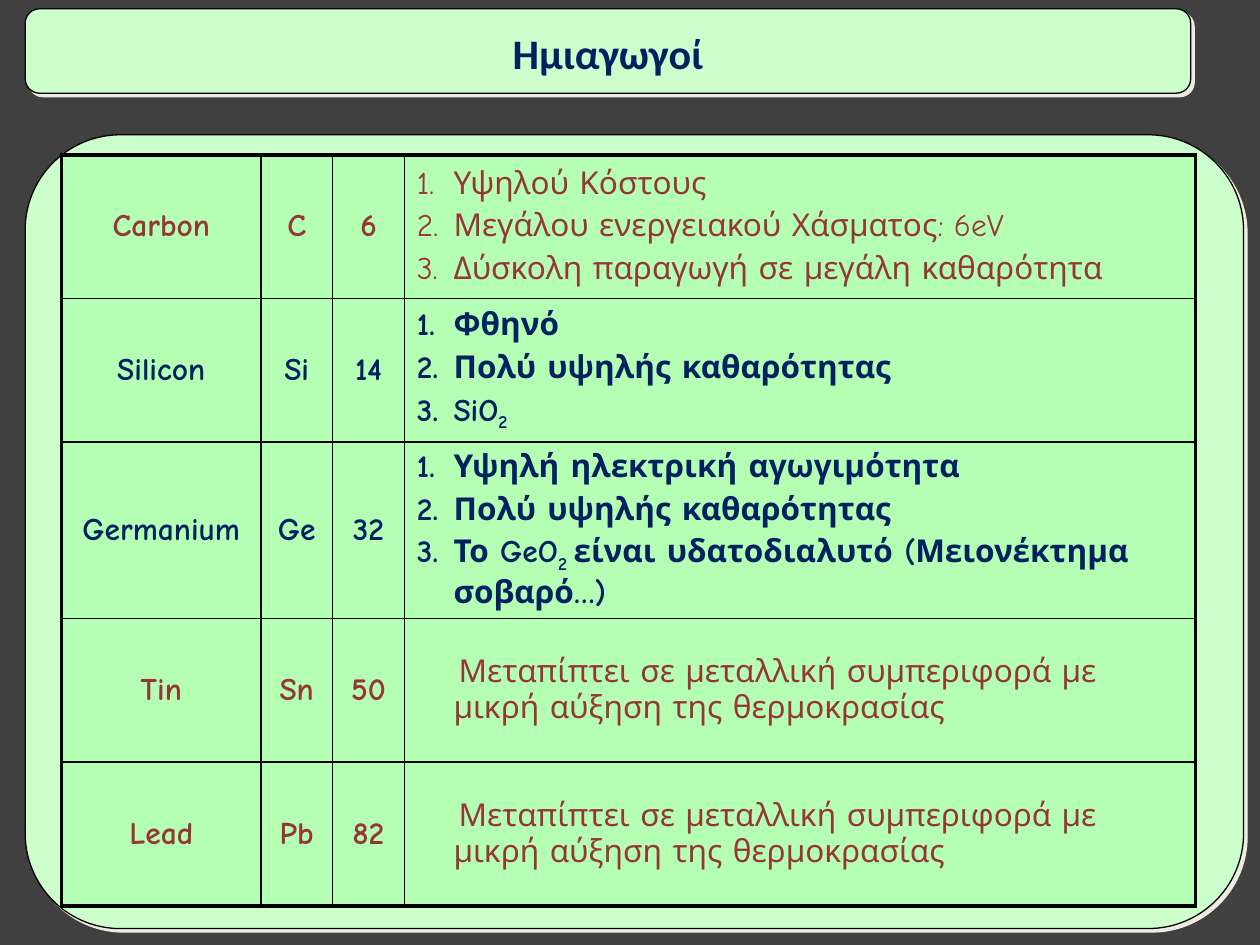
from dataclasses import dataclass

from lxml.etree import SubElement
from pptx import Presentation
from pptx.dml.color import RGBColor as RGB
from pptx.enum.shapes import MSO_SHAPE as Shape
from pptx.enum.text import MSO_ANCHOR as Anchor, MSO_AUTO_SIZE as AutoSize, PP_ALIGN as Align
from pptx.oxml import parse_xml
from pptx.oxml.ns import nsdecls, qn
from pptx.util import Inches, Pt


@dataclass(frozen=True)
class Theme:
    backdrop: str = "404040"
    panel: str = "CCFFCC"
    cell: str = "99FF99"
    cell_opacity: int = 44
    line: str = "000000"
    shadow: str = "EEECE1"
    suitable: str = "002060"
    unsuitable: str = "953735"
    title_font: str = "Calibri"
    table_font: str = "Comic Neue"
    title_size: int = 24
    table_size: int = 18
    outer_border: float = 2.25
    inner_border: float = 1


class SlideBuilder:
    def __init__(self, slide, theme):
        self.slide = slide
        self.theme = theme
        background = slide.background.fill
        background.solid()
        background.fore_color.rgb = RGB.from_string(theme.backdrop)

    def panel(self, left, top, width, height, corner):
        panel = self.slide.shapes.add_shape(
            Shape.ROUNDED_RECTANGLE, Inches(left), Inches(top), Inches(width), Inches(height))
        panel.adjustments[0] = corner
        panel.fill.solid()
        panel.fill.fore_color.rgb = RGB.from_string(self.theme.panel)
        panel.line.color.rgb = RGB.from_string(self.theme.line)
        panel.line.width = Pt(0.75)
        panel.shadow.inherit = False
        effects = panel._element.spPr.find(qn("a:effectLst"))
        effects.append(parse_xml(
            f'<a:outerShdw {nsdecls("a")} dist="{Pt(2.8)}" dir="2700000" algn="ctr" '
            f'rotWithShape="0"><a:srgbClr val="{self.theme.shadow}"/></a:outerShdw>'))

    def title(self, text, left, top, width, height):
        """Fill the title placeholder and bring it in front of its banner."""
        title = self.slide.shapes.title
        title.left, title.top = Inches(left), Inches(top)
        title.width, title.height = Inches(width), Inches(height)
        frame = title.text_frame
        frame.text = text
        frame.word_wrap = True
        frame.vertical_anchor = Anchor.TOP
        frame.auto_size = AutoSize.SHAPE_TO_FIT_TEXT
        heading = frame.paragraphs[0]
        heading.alignment = Align.CENTER
        self.style(heading, self.theme.title_font, self.theme.title_size,
                   self.theme.suitable, True)
        self.slide.shapes._spTree.append(title._element)

    def style(self, paragraph, typeface, size, color, bold):
        font = paragraph.font
        font.name, font.size, font.bold = typeface, Pt(size), bold
        font.color.rgb = RGB.from_string(color)

    def table(self, elements, left, top, widths, heights):
        table = self.slide.shapes.add_table(
            len(elements), len(widths), Inches(left), Inches(top),
            Inches(sum(widths)), Inches(sum(heights))).table
        table.first_row = table.horz_banding = False
        for column, width in zip(table.columns, widths):
            column.width = Inches(width)
        for row, height in zip(table.rows, heights):
            row.height = Inches(height)
        last_row, last_column = len(heights) - 1, len(widths) - 1
        for r, (name, symbol, number, remarks, suitable) in enumerate(elements):
            color = self.theme.suitable if suitable else self.theme.unsuitable
            for c, label in enumerate((name, symbol, number)):
                self.label(table.cell(r, c), label, color)
            self.remarks(table.cell(r, last_column), remarks, color, suitable)
            for c in range(len(widths)):
                self.frame_cell(table.cell(r, c), {
                    "L": c == 0, "R": c == last_column, "T": r == 0, "B": r == last_row})

    def label(self, cell, text, color):
        cell.text = text
        paragraph = cell.text_frame.paragraphs[0]
        paragraph.alignment = Align.CENTER
        self.style(paragraph, self.theme.table_font, self.theme.table_size, color, True)

    def remarks(self, cell, remarks, color, bold):
        """Write a numbered list, or a plain note when there is one remark.

        Text between underscores is set as subscript.
        """
        numbered = len(remarks) > 1
        frame = cell.text_frame
        for i, remark in enumerate(remarks):
            paragraph = frame.add_paragraph() if i else frame.paragraphs[0]
            props = paragraph._p.get_or_add_pPr()
            props.set("marL", str(Inches(0.29)))
            props.set("indent", str(Inches(-0.29 if numbered else 0.04)))
            if i:
                paragraph.space_before = Pt(0.2 * self.theme.table_size)
            if numbered:
                SubElement(props, qn("a:buFont"), typeface=self.theme.table_font)
                SubElement(props, qn("a:buAutoNum"), type="arabicPeriod")
            self.style(paragraph, self.theme.table_font, self.theme.table_size, color, bold)
            for part, text in enumerate(remark.split("_")):
                if text:
                    run = paragraph.add_run()
                    run.text = text
                    if part % 2:
                        run._r.get_or_add_rPr().set("baseline", "-25000")

    def frame_cell(self, cell, outer_sides):
        theme = self.theme
        cell.vertical_anchor = Anchor.MIDDLE
        cell.fill.solid()
        cell.fill.fore_color.rgb = RGB.from_string(theme.cell)
        props = cell._tc.get_or_add_tcPr()
        tint = props.find(qn("a:solidFill")).find(qn("a:srgbClr"))
        SubElement(tint, qn("a:alpha"), val=str(theme.cell_opacity * 1000))
        for position, (side, outer) in enumerate(outer_sides.items()):
            width = Pt(theme.outer_border if outer else theme.inner_border)
            props.insert(position, parse_xml(
                f'<a:ln{side} {nsdecls("a")} w="{width}"><a:solidFill>'
                f'<a:srgbClr val="{theme.line}"/></a:solidFill></a:ln{side}>'))


METALLIC = ["Μεταπίπτει σε μεταλλική συμπεριφορά με μικρή αύξηση της θερμοκρασίας"]
PURE = "Πολύ υψηλής καθαρότητας"
# name, symbol, atomic number, remarks, suitable as a semiconductor
ELEMENTS = [
    ("Carbon", "C", "6", ["Υψηλού Κόστους", "Μεγάλου ενεργειακού Χάσματος: 6eV",
                          "Δύσκολη παραγωγή σε μεγάλη καθαρότητα"], False),
    ("Silicon", "Si", "14", ["Φθηνό", PURE, "SiO_2_"], True),
    ("Germanium", "Ge", "32", ["Υψηλή ηλεκτρική αγωγιμότητα", PURE,
                               "Το GeO_2 _είναι υδατοδιαλυτό (Μειονέκτημα σοβαρό…)"], True),
    ("Tin", "Sn", "50", METALLIC, False),
    ("Lead", "Pb", "82", METALLIC, False),
]


def main():
    deck = Presentation()
    deck.slide_width, deck.slide_height = Inches(10), Inches(7.5)
    title_only = deck.slide_layouts[5]
    builder = SlideBuilder(deck.slides.add_slide(title_only), Theme())
    builder.panel(0.2, 1.07, 9.67, 6.3, corner=0.12)
    builder.table(ELEMENTS, 0.49, 1.23, widths=[1.58, 0.57, 0.57, 6.28],
                  heights=[1.14, 1.14, 1.4, 1.14, 1.14])
    builder.panel(0.2, 0.07, 9.25, 0.67, corner=0.17)
    builder.title("Ημιαγωγοί", 0.45, 0.17, 8.75, 0.51)
    deck.save("out.pptx")


if __name__ == "__main__":
    main()
